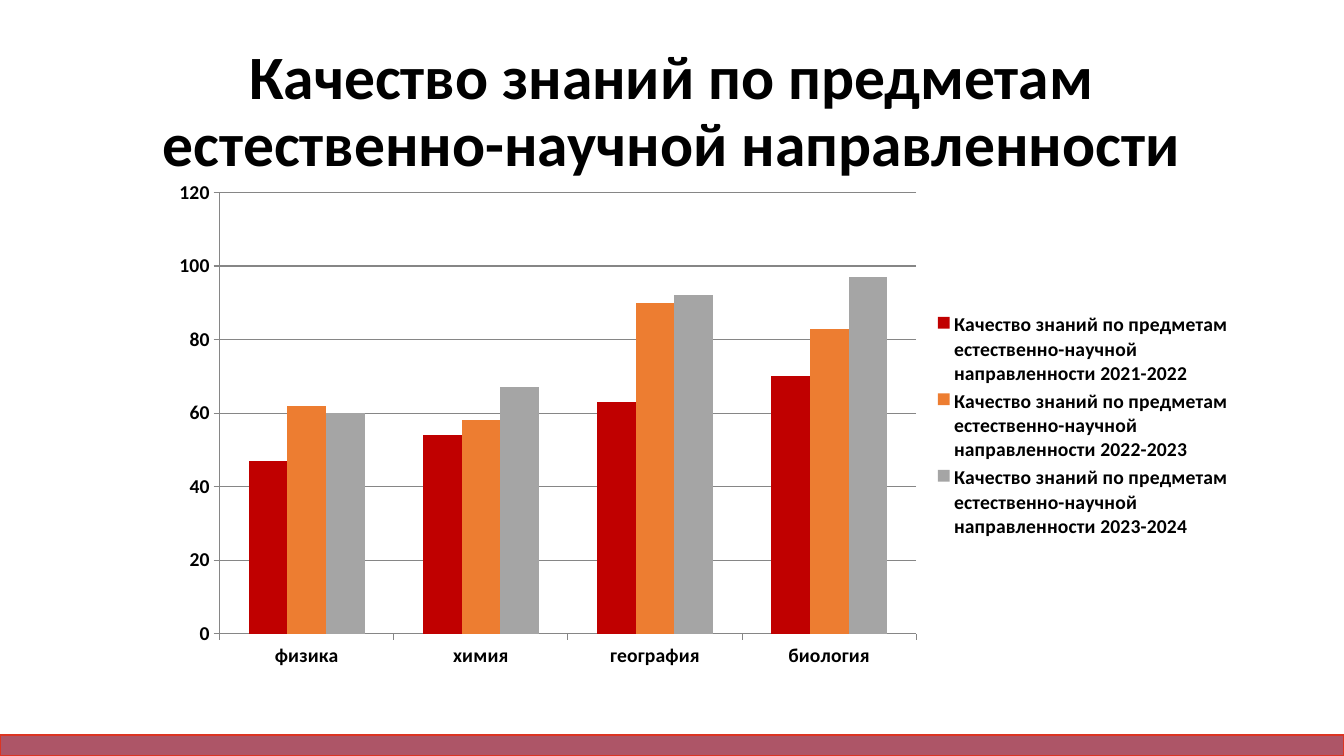
import pptx
import pptx.util
import pptx.chart.data
import pptx.dml.color
import pptx.enum.chart
import pptx.enum.shapes
import pptx.enum.text
import pptx.oxml
import pptx.oxml.ns
from pptx.util import Cm, Pt

FONT = "Calibri"
COLORS = {
    "background": "FFFFFF",
    "text": "000000",
    "band": "AD5567",
    "band_line": "DC3422",
    "grid": "868686",
}
TOPIC = "Качество знаний по предметам естественно-научной направленности"
SUBJECTS = ["физика", "химия", "география", "биология"]
YEARS = [
    ("2021-2022", [47, 54, 63, 70], "C00000"),
    ("2022-2023", [62, 58, 90, 83], "ED7D31"),
    ("2023-2024", [60, 67, 92, 97], "A5A5A5"),
]
PLOT_AREA = {"x": 0.06, "y": 0.04, "w": 0.64, "h": 0.87}


def rgb(value):
    """Return the colour for a hex string."""
    return pptx.dml.color.RGBColor.from_string(value)


def style_font(font, size):
    """Set the bold text style of the slide at the given size."""
    font.name = FONT
    font.size = Pt(size)
    font.bold = True
    font.color.rgb = rgb(COLORS["text"])


def add_title(slide, left, top, width, height):
    """Add the centred heading inside the box."""
    tf = slide.shapes.add_textbox(left, top, width, height).text_frame
    tf.word_wrap = True
    tf.vertical_anchor = pptx.enum.text.MSO_ANCHOR.MIDDLE
    p = tf.paragraphs[0]
    p.alignment = pptx.enum.text.PP_ALIGN.CENTER
    p.line_spacing = 0.9
    r = p.add_run()
    r.text = TOPIC
    style_font(r.font, 44)


def add_band(slide, left, top, width, height):
    """Add the coloured band filling the box."""
    sp = slide.shapes.add_shape(
        pptx.enum.shapes.MSO_SHAPE.RECTANGLE, left, top, width, height)
    sp.shadow.inherit = False
    sp.fill.solid()
    sp.fill.fore_color.rgb = rgb(COLORS["band"])
    sp.line.color.rgb = rgb(COLORS["band_line"])
    sp.line.width = Pt(1)


def set_plot_area(chart):
    """Place the inner plot area by fractions of the chart box."""
    plot_area = chart.plots[0]._element.getparent()
    for old in plot_area.findall(pptx.oxml.ns.qn("c:layout")):
        plot_area.remove(old)
    sizes = "".join(f'<c:{k} val="{v}"/>' for k, v in PLOT_AREA.items())
    plot_area.insert(0, pptx.oxml.parse_xml(
        f'<c:layout {pptx.oxml.ns.nsdecls("c")}><c:manualLayout>'
        '<c:layoutTarget val="inner"/><c:xMode val="edge"/><c:yMode val="edge"/>'
        f'{sizes}</c:manualLayout></c:layout>'))


def add_quality_chart(slide, left, top, width, height):
    """Add the column chart of subjects by school year inside the box."""
    data = pptx.chart.data.CategoryChartData()
    data.categories = SUBJECTS
    for year, values, _ in YEARS:
        data.add_series(f"{TOPIC} {year}", values)
    chart = slide.shapes.add_chart(
        pptx.enum.chart.XL_CHART_TYPE.COLUMN_CLUSTERED,
        left, top, width, height, data).chart
    chart.has_title = False
    style_font(chart.font, 14)

    plot = chart.plots[0]
    plot.gap_width = 150
    plot.overlap = 0
    plot.vary_by_categories = False
    for series, (_, _, color) in zip(plot.series, YEARS):
        series.format.fill.solid()
        series.format.fill.fore_color.rgb = rgb(color)

    for axis in (chart.category_axis, chart.value_axis):
        style_font(axis.tick_labels.font, 14)
        axis.major_tick_mark = pptx.enum.chart.XL_TICK_MARK.OUTSIDE
        axis.format.line.color.rgb = rgb(COLORS["grid"])
    axis = chart.value_axis
    axis.minimum_scale, axis.maximum_scale, axis.major_unit = 0, 120, 20
    axis.has_major_gridlines = True
    axis.major_gridlines.format.line.color.rgb = rgb(COLORS["grid"])

    chart.has_legend = True
    chart.legend.position = pptx.enum.chart.XL_LEGEND_POSITION.RIGHT
    chart.legend.include_in_layout = False
    style_font(chart.legend.font, 14)
    set_plot_area(chart)


def main():
    """Build the slide and save it."""
    prs = pptx.Presentation()
    prs.slide_width, prs.slide_height = Cm(33.87), Cm(19.05)
    slide = prs.slides.add_slide(prs.slide_layouts[6])
    slide.background.fill.solid()
    slide.background.fill.fore_color.rgb = rgb(COLORS["background"])
    add_title(slide, Cm(2.33), Cm(1.01), Cm(29.21), Cm(3.68))
    band_height = Cm(0.53)
    add_band(slide, 0, prs.slide_height - band_height, prs.slide_width, band_height)
    add_quality_chart(slide, Cm(3.89), Cm(4.34), Cm(27.43), Cm(12.78))
    prs.save("out.pptx")


if __name__ == "__main__":
    main()
